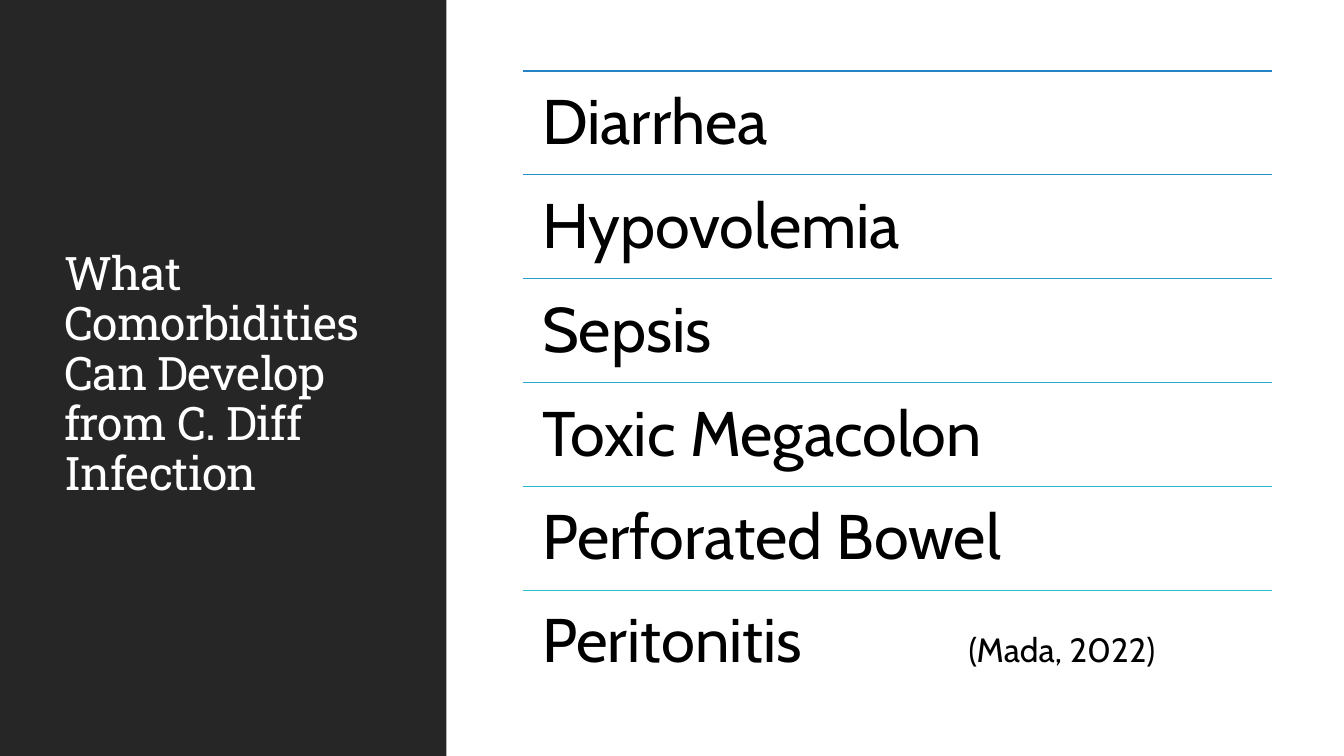
"""Builds a slide listing the comorbidities of C. Diff infection beside a dark title panel."""
import pptx
import pptx.dml.color
import pptx.enum.shapes
import pptx.enum.text
import pptx.util
from lxml import etree
from pptx.oxml.ns import qn
from pptx.util import Cm


def color(value):
    return pptx.dml.color.RGBColor.from_string(value)


def add_text(para, text, size, font="Cabin", fill="000000", spacing=None):
    span = para.add_run()
    span.text = text
    span.font.size = pptx.util.Pt(size)
    span.font.name = font
    span.font.color.rgb = color(fill)
    if spacing is not None:
        span.font._element.set("spc", str(spacing))
    para.line_spacing = 0.9


deck = pptx.Presentation()
deck.slide_width, deck.slide_height = Cm(33.87), Cm(19.05)
page = deck.slides.add_slide(deck.slide_layouts[6])
page.background.fill.solid()
page.background.fill.fore_color.rgb = color("FFFFFF")

panel = page.shapes.add_shape(
    pptx.enum.shapes.MSO_SHAPE.RECTANGLE, 0, 0, Cm(11.25), deck.slide_height)
panel.shadow.inherit = False
panel.fill.solid()
panel.fill.fore_color.rgb = color("262626")
panel.line.fill.background()

title = page.shapes.add_textbox(Cm(1.37), Cm(1.45), Cm(8.56), Cm(16.03)).text_frame
title.word_wrap = True
title.vertical_anchor = pptx.enum.text.MSO_ANCHOR.MIDDLE
add_text(title.paragraphs[0], "What Comorbidities Can Develop from C. Diff Infection", 33,
         font="Roboto Slab", fill="FFFFFF", spacing=-50)

rows = [
    ("Diarrhea", 45, "2683C6"),
    ("Hypovolemia", 45, "2690C7"),
    ("Sepsis", 45, "279DC8"),
    ("Toxic Megacolon", 45, "27AACA"),
    ("Perforated Bowel", 45, "28B7CB"),
    ("Peritonitis", 44, "28C4CC"),
]
left, top, width, row_height = Cm(13.18), Cm(1.78), Cm(18.87), Cm(2.62)

for index, (name, size, rule_color) in enumerate(rows):
    row_top = top + index * row_height
    rule = page.shapes.add_connector(
        pptx.enum.shapes.MSO_CONNECTOR.STRAIGHT, left, row_top, left + width, row_top)
    rule.line.color.rgb = color(rule_color)
    rule.line.width = pptx.util.Pt(1.25)
    etree.SubElement(rule._element.spPr, qn("a:effectLst"))

    box = page.shapes.add_textbox(left, row_top, width, row_height).text_frame
    box.word_wrap = True
    box.margin_left = box.margin_right = box.margin_top = box.margin_bottom = Cm(0.48)
    para = box.paragraphs[0]
    add_text(para, name, size)

add_text(para, "\t", 39)
add_text(para, "(Mada, 2022)", 24)
tab_stops = etree.SubElement(para._p.get_or_add_pPr(), qn("a:tabLst"))
etree.SubElement(tab_stops, qn("a:tab"), pos=str(Cm(10.75)), algn="l")

deck.save("out.pptx")
